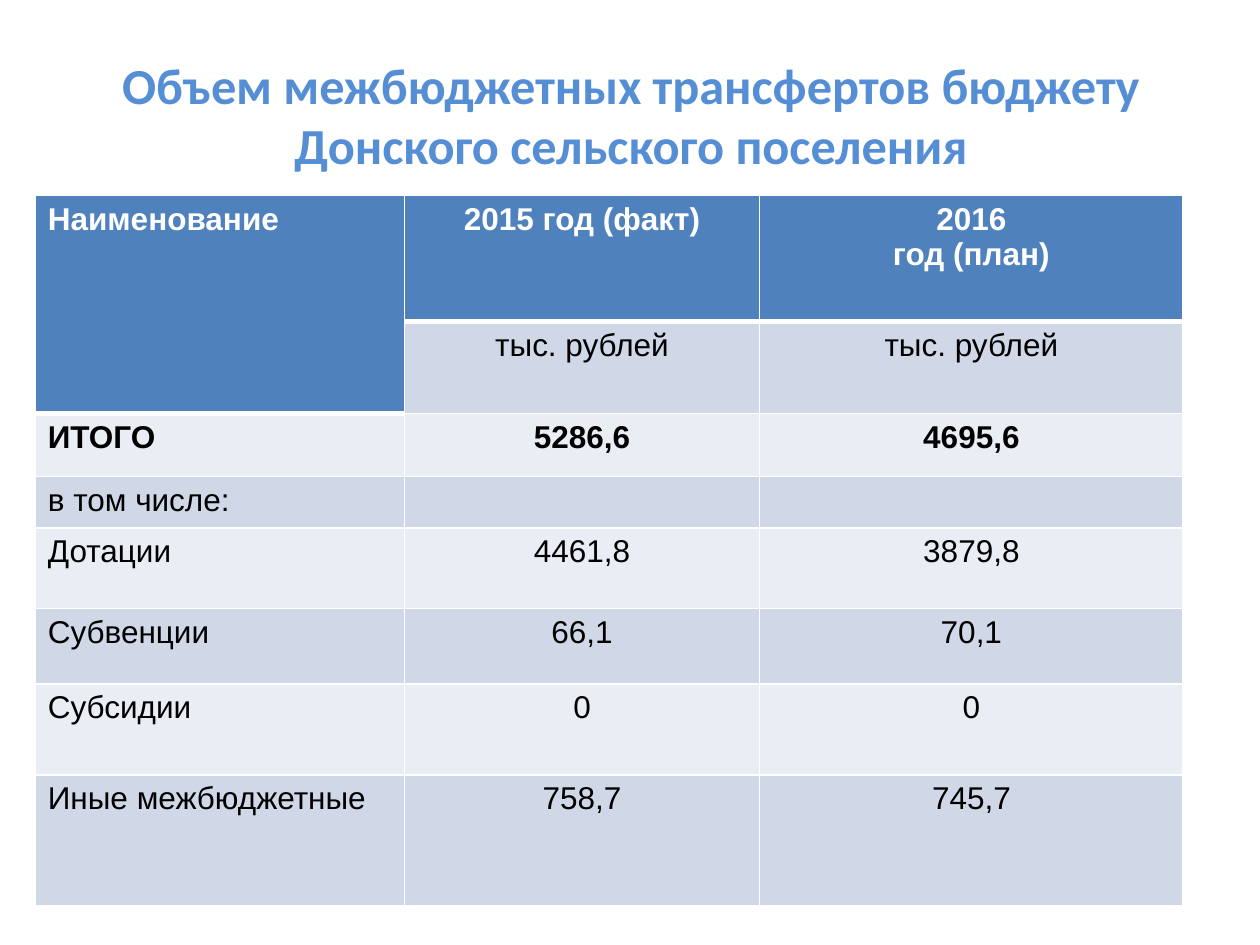
from lxml.etree import SubElement
from pptx import Presentation
from pptx.dml.color import RGBColor
from pptx.enum.text import MSO_ANCHOR, PP_ALIGN
from pptx.oxml.ns import qn
from pptx.util import Inches, Pt

TITLE_BLUE = RGBColor(0x55, 0x8E, 0xD5)
HEADER_BLUE = RGBColor(0x4F, 0x81, 0xBD)
BAND_DARK = RGBColor(0xD0, 0xD8, 0xE8)
BAND_LIGHT = RGBColor(0xE9, 0xED, 0xF4)
WHITE = RGBColor(0xFF, 0xFF, 0xFF)
BLACK = RGBColor(0, 0, 0)

TITLE = "Объем межбюджетных трансфертов бюджету Донского сельского поселения"
TRANSFERS = [
    ("Наименование", "2015 год (факт)", "2016\nгод (план)"),
    ("", "тыс. рублей", "тыс. рублей"),
    ("ИТОГО", "5286,6", "4695,6"),
    ("в том числе:", "", ""),
    ("Дотации", "4461,8", "3879,8"),
    ("Субвенции", "66,1", "70,1"),
    ("Субсидии", "0", "0"),
    ("Иные межбюджетные", "758,7", "745,7"),
]
COLUMN_WIDTHS = [2.93, 2.82, 3.36]
ROW_HEIGHTS = [1, 0.73, 0.5, 0.41, 0.64, 0.6, 0.72, 1.04]
TOTAL_ROW = 2


def format_paragraph(paragraph, font_name, size, color, bold, align):
    paragraph.alignment = align
    for run in paragraph.runs:
        run.font.name = font_name
        run.font.size = Pt(size)
        run.font.bold = bold
        run.font.color.rgb = color


def add_title(slide, left, top, width, height):
    title = slide.shapes.add_textbox(left, top, width, height)
    frame = title.text_frame
    frame.word_wrap = True
    frame.vertical_anchor = MSO_ANCHOR.MIDDLE
    frame.text = TITLE
    format_paragraph(frame.paragraphs[0], "Calibri", 28.8, TITLE_BLUE, True, PP_ALIGN.CENTER)


def add_borders(cell, bottom_points):
    """Draw white cell borders; call before the fill, which must follow them."""
    properties = cell._tc.get_or_add_tcPr()
    for side, points in (("L", 1), ("R", 1), ("T", 1), ("B", bottom_points)):
        line = SubElement(properties, qn(f"a:ln{side}"), w=str(Pt(points)))
        fill = SubElement(line, qn("a:solidFill"))
        SubElement(fill, qn("a:srgbClr"), val=str(WHITE))


def fill_cell(cell, text, row, column):
    is_header = row == 0 or (row == 1 and column == 0)
    add_borders(cell, 3 if is_header else 1)
    cell.fill.solid()
    if is_header:
        cell.fill.fore_color.rgb = HEADER_BLUE
    else:
        cell.fill.fore_color.rgb = BAND_DARK if row % 2 else BAND_LIGHT
    if not text:
        return
    cell.text_frame.text = text
    for paragraph in cell.text_frame.paragraphs:
        format_paragraph(
            paragraph, "Arial", 18,
            WHITE if is_header else BLACK,
            is_header or row == TOTAL_ROW,
            PP_ALIGN.CENTER if column else PP_ALIGN.LEFT,
        )


def add_transfers_table(slide, left, top, width, height):
    frame = slide.shapes.add_table(
        len(TRANSFERS), len(COLUMN_WIDTHS), left, top, width, height)
    table = frame.table
    for column, column_width in zip(table.columns, COLUMN_WIDTHS):
        column.width = Inches(column_width)
    for row, row_height in zip(table.rows, ROW_HEIGHTS):
        row.height = Inches(row_height)
    for row, texts in enumerate(TRANSFERS):
        for column, text in enumerate(texts):
            fill_cell(table.cell(row, column), text, row, column)
    table.cell(0, 0).merge(table.cell(1, 0))


def main():
    presentation = Presentation()
    presentation.slide_width = Inches(10)
    presentation.slide_height = Inches(7.5)
    slide = presentation.slides.add_slide(presentation.slide_layouts[6])
    add_title(slide, Inches(0.51), Inches(0.36), Inches(9), Inches(1.1))
    add_transfers_table(slide, Inches(0.28), Inches(1.55),
                        Inches(sum(COLUMN_WIDTHS)), Inches(sum(ROW_HEIGHTS)))
    presentation.save("out.pptx")


if __name__ == "__main__":
    main()
